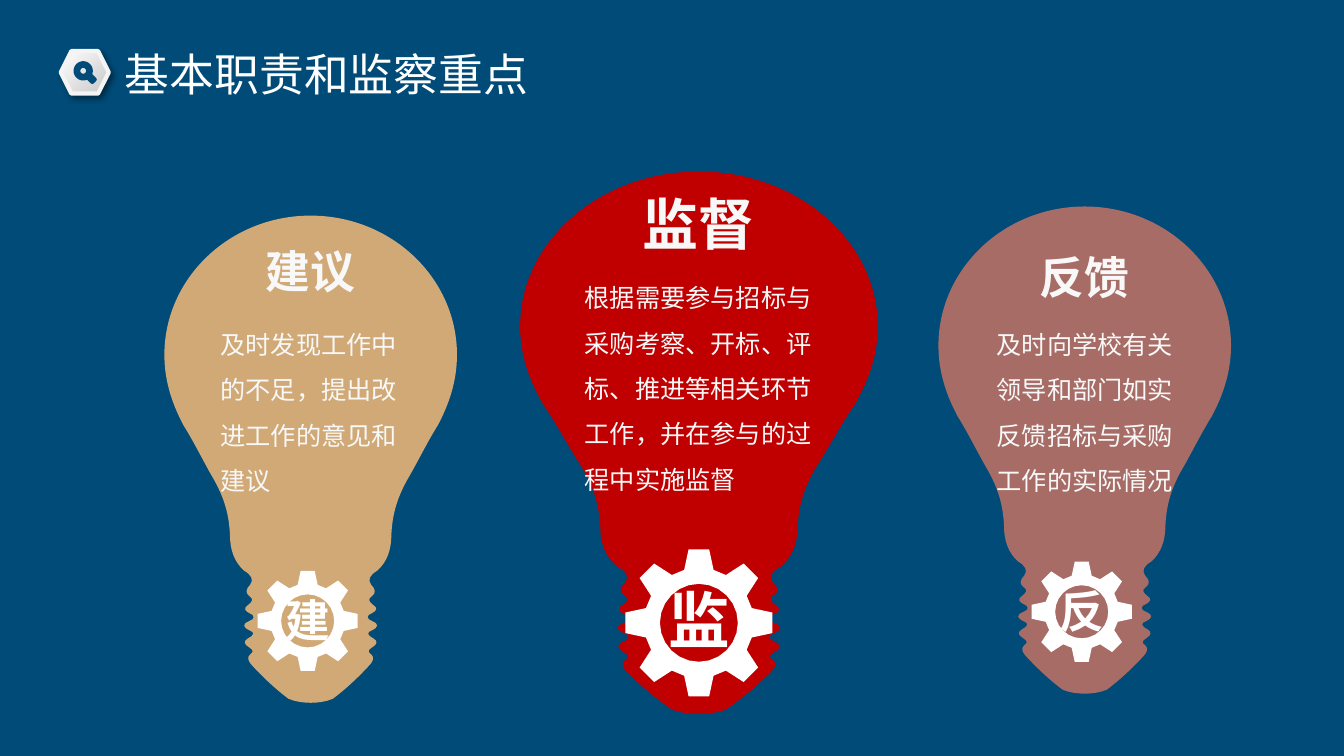
from math import cos, pi, sin

from lxml import etree
from pptx import Presentation
from pptx.dml.color import RGBColor
from pptx.enum.shapes import MSO_SHAPE
from pptx.enum.text import MSO_ANCHOR, PP_ALIGN
from pptx.oxml.ns import qn
from pptx.util import Pt

LEFT, CENTER = PP_ALIGN.LEFT, PP_ALIGN.CENTER
TOP = MSO_ANCHOR.TOP
HEXAGON = MSO_SHAPE.HEXAGON

JAPANESE_FONT = "Noto Sans CJK JP"
CHINESE_FONT = "Noto Sans CJK SC"
BACKGROUND, WHITE, OFF_WHITE = "014B78", "FFFFFF", "F8F8F8"

HALF_BULB = [
    (0, 0),
    (80, 0), (145, 62), (145, 138),
    (145, 166), (136, 189), (126, 208),
    (117, 222), (105, 246), (98, 258),
    (85, 280), (81, 297), (80, 316),
    (80, 331), (76, 343), (66, 352),
    (59, 356), (56, 361), (60, 366),
    (64, 370), (65, 374), (61, 377),
    (56, 380), (58, 383), (62, 386),
    (67, 389), (65, 392), (61, 394),
    (55, 396), (55, 400), (61, 402),
    (68, 405), (67, 408), (61, 411),
    (55, 413), (56, 416), (62, 419),
    (67, 422), (66, 425), (61, 428),
    (56, 431), (57, 433), (60, 435),
    (64, 438), (61, 443), (58, 446),
    (46, 459), (34, 470), (22, 479),
    (15, 482), (7, 483), (0, 483),
]
BULB_WIDTH, BULB_HEIGHT = 290, 483

BULBS = [
    dict(box=(117.4, 154, 209, 348), color="D0A976", heading="建议", heading_size=32,
         heading_top=16.6, body="及时发现工作中的不足，提出改进工作的意见和建议",
         body_box=(33, 67, 148.3, 138), letter="建", gear_size=71.5),
    dict(box=(371.5, 122.5, 255.5, 387.5), color="C00000", heading="监督", heading_size=40,
         heading_top=9.4, body="根据需要参与招标与采购考察、开标、评标、推进等相关环节工作，并在参与的过程中实施监督",
         body_box=(39, 65, 178, 170), letter="监", gear_size=105),
    dict(box=(670.3, 147.5, 209, 348), color="A66C65", heading="反馈", heading_size=32,
         heading_top=27.4, body="及时向学校有关领导和部门如实反馈招标与采购工作的实际情况",
         body_box=(34.6, 73.4, 148.3, 138), letter="反", gear_size=71.5),
]


def rgb(value):
    """Turn a hex string into a colour."""
    return RGBColor.from_string(value)


def write_text(shape, text, size, color, font=JAPANESE_FONT, bold=False,
               align=LEFT, wrap=True, spacing=1):
    """Put one formatted paragraph into a shape."""
    frame = shape.text_frame
    frame.word_wrap = wrap
    frame.vertical_anchor = TOP
    paragraph = frame.paragraphs[0]
    paragraph.alignment = align
    paragraph.line_spacing = Pt(size * 1.2 * spacing)
    run = paragraph.add_run()
    run.text = text
    run.font.size, run.font.bold, run.font.name = Pt(size), bold, font
    run.font.color.rgb = rgb(color)
    east_asian = CHINESE_FONT if font == "Arial" else font
    etree.SubElement(run.font._element, qn("a:ea"), typeface=east_asian)


def add_text(shapes, box, text, **text_format):
    """Add a text box at a box given in points."""
    shape = shapes.add_textbox(*(Pt(length) for length in box))
    write_text(shape, text, **text_format)


def add_outline(shapes, contours, color):
    """Draw closed contours, given in points, as one filled freeform."""
    contours = [[(Pt(x), Pt(y)) for x, y in contour] for contour in contours]
    builder = shapes.build_freeform(*contours[0][0])
    builder.add_line_segments(contours[0][1:])
    for contour in contours[1:]:
        builder.move_to(*contour[0])
        builder.add_line_segments(contour[1:])
    shape = builder.convert_to_shape()
    shape.shadow.inherit = False
    shape.fill.solid()
    shape.fill.fore_color.rgb = rgb(color)
    shape.line.fill.background()
    return shape


def bend_segments(shape):
    """Turn every three straight segments of a freeform into one Bézier curve."""
    segments = list(shape._element.iter(qn("a:lnTo")))
    for index in range(0, len(segments), 3):
        curve = etree.Element(qn("a:cubicBezTo"))
        segments[index].addprevious(curve)
        for segment in segments[index:index + 3]:
            curve.append(segment[0])
            segment.getparent().remove(segment)


def arc(center_x, center_y, radius, start, end, steps=24):
    """List points along a circle between two angles in degrees."""
    angles = [(start + (end - start) * step / steps) * pi / 180 for step in range(steps + 1)]
    return [(center_x + radius * cos(angle), center_y + radius * sin(angle)) for angle in angles]


def add_gear(shapes, center_x, center_y, size, letter):
    """Group an eight-toothed gear with the letter in its hole."""
    group = shapes.add_group_shape()
    teeth = []
    for tooth in range(8):
        turn = tooth * pi / 4
        for x, y in [(-0.1, -0.36), (-0.07, -0.5), (0.07, -0.5), (0.1, -0.36)]:
            teeth.append((center_x + size * (x * cos(turn) - y * sin(turn)),
                          center_y + size * (x * sin(turn) + y * cos(turn))))
    hole = arc(center_x, center_y, size * 0.265, 360, 0)
    add_outline(group.shapes, [teeth, hole], WHITE)
    letter_size = 44 if size > 100 else 32
    width = letter_size + 14.4
    box = (center_x - width / 2, center_y - letter_size * 0.75, width, letter_size * 1.2 + 7.2)
    add_text(group.shapes, box, letter, size=letter_size, color=WHITE, font=CHINESE_FONT,
             bold=True, align=CENTER, wrap=False)


def add_bulb(shapes, box, color, heading, heading_size, heading_top, body, body_box, letter, gear_size):
    """Draw a light bulb with its heading, text and gear."""
    left, top, width, height = box
    center = left + width / 2
    mirrored = [(-x, y) for x, y in reversed(HALF_BULB[:-1])]
    outline = [(center + x * width / BULB_WIDTH, top + y * height / BULB_HEIGHT)
               for x, y in HALF_BULB + mirrored]
    bend_segments(add_outline(shapes, [outline], color))
    heading_width = heading_size * 2 + 14.4
    add_text(shapes, (center - heading_width / 2, top + heading_top, heading_width, heading_size * 1.2 + 7.2),
             heading, size=heading_size, color=OFF_WHITE, bold=True, align=CENTER, wrap=False)
    body_left, body_top, body_width, body_height = body_box
    add_text(shapes, (left + body_left, top + body_top, body_width, body_height),
             body, size=18, color=OFF_WHITE, font="Arial", spacing=1.5)
    add_gear(shapes, left + width * 0.49 if gear_size < 100 else center,
             top + height * 0.832, gear_size, letter)


def add_shadow(shape):
    """Give a shape a soft shadow towards the lower right."""
    shape.shadow.inherit = False
    effects = shape._element.spPr.find(qn("a:effectLst"))
    shadow = etree.SubElement(effects, qn("a:outerShdw"), blurRad=str(Pt(4)), dist=str(Pt(3)),
                              dir="2700000", algn="tl", rotWithShape="0")
    black = etree.SubElement(shadow, qn("a:srgbClr"), val="000000")
    etree.SubElement(black, qn("a:alpha"), val="40000")


def add_search_icon(shapes, left, top, width, height):
    """Draw a magnifier on a shaded hexagon."""
    hexagon = shapes.add_shape(HEXAGON, Pt(left), Pt(top), Pt(width), Pt(height))
    hexagon.fill.gradient()
    hexagon.fill.gradient_angle = 315
    for stop, color in zip(hexagon.fill.gradient_stops, (WHITE, "C8C8C8")):
        stop.color.rgb = rgb(color)
    hexagon.line.color.rgb = rgb("F4F4F4")
    hexagon.line.width = Pt(3)
    etree.SubElement(hexagon.line._get_or_add_ln(), qn("a:round"))
    add_shadow(hexagon)
    center_x, center_y = left + width / 2 - 1.1, top + height / 2 - 1.1
    handle = [(center_x + x, center_y + y) for x, y in [(8.2, 6.2), (6.5, 7.9), (4, 5.4)]]
    rim = arc(center_x, center_y, 5.4, 60, 390)
    lens = arc(center_x, center_y, 3.6, 360, 0)
    magnifier = add_outline(shapes, [rim + handle, lens], "01588D")
    magnifier.line.color.rgb = rgb(BACKGROUND)
    magnifier.line.width = Pt(3)


def add_header(slide, left, top, width, height):
    """Place the title and the icon before it."""
    title = slide.shapes.title
    title.left, title.top, title.width, title.height = Pt(left), Pt(top), Pt(width), Pt(height)
    write_text(title, "基本职责和监察重点", size=32, color=WHITE)
    add_search_icon(slide.shapes, left - 38.6, top + 7, 34.3, 30.4)


def main():
    """Build the slide and save it."""
    presentation = Presentation()
    presentation.slide_width, presentation.slide_height = Pt(960), Pt(540)
    slide = presentation.slides.add_slide(presentation.slide_layouts[5])
    slide.background.fill.solid()
    slide.background.fill.fore_color.rgb = rgb(BACKGROUND)
    for bulb in BULBS:
        add_bulb(slide.shapes, **bulb)
    add_header(slide, 82, 29.5, 311, 46)
    presentation.save("out.pptx")


if __name__ == "__main__":
    main()
